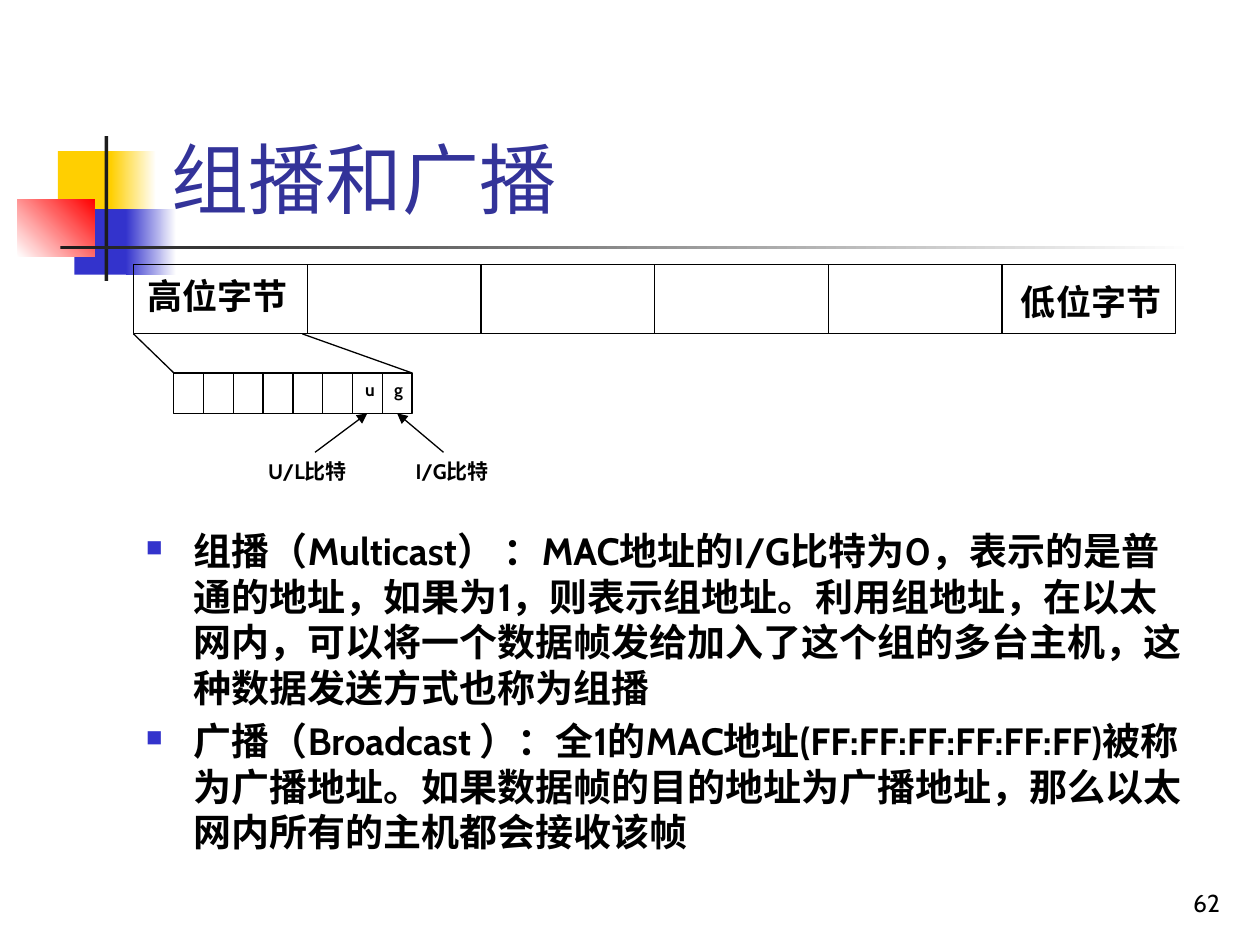
from dataclasses import dataclass

from lxml import etree
from pptx import Presentation
from pptx import util as u
from pptx.dml import color
from pptx.enum import shapes, text
from pptx.oxml import ns


@dataclass(frozen=True)
class Theme:
    font: str = "Cabin"
    black: str = "000000"
    white: str = "FFFFFF"
    title: str = "333399"
    yellow: str = "FFCF01"
    blue: str = "3333CC"
    red: str = "FF0000"
    rule: str = "1C1C1C"
    title_size: float = 44
    body_size: float = 21.7
    byte_size: float = 20
    number_size: float = 14
    label_size: float = 12
    bit_size: float = 10
    line_width: float = 0.75


THEME = Theme()


def rgb(value):
    return color.RGBColor.from_string(value)


def add_child(parent, tag, **attributes):
    return etree.SubElement(parent, ns.qn(tag), attributes)


def add_text(slide, box, *paragraphs, size, fill=THEME.black, bold=False,
             align=text.PP_ALIGN.LEFT, anchor=text.MSO_ANCHOR.TOP,
             gap=0, bullet=None, indent=0):
    shape = slide.shapes.add_textbox(*map(u.Inches, box))
    frame = shape.text_frame
    frame.word_wrap = True
    frame.vertical_anchor = anchor
    for index, content in enumerate(paragraphs):
        paragraph = frame.add_paragraph() if index else frame.paragraphs[0]
        paragraph.alignment = align
        if index:
            paragraph.space_before = u.Pt(gap)
        run = paragraph.add_run()
        run.text = content
        run.font.name = THEME.font
        run.font.size = u.Pt(size)
        run.font.bold = bold
        run.font.color.rgb = rgb(fill)
        if bullet:
            add_bullet(paragraph, bullet, indent)
    return shape


def add_bullet(paragraph, bullet, indent):
    properties = paragraph._p.get_or_add_pPr()
    properties.set("marL", str(u.Inches(indent)))
    properties.set("indent", str(-u.Inches(indent)))
    bullet_color = add_child(properties, "a:buClr")
    add_child(bullet_color, "a:srgbClr", val=THEME.blue)
    add_child(properties, "a:buSzPct", val="60000")
    add_child(properties, "a:buChar", char=bullet)


def add_rectangle(slide, box):
    shape = slide.shapes.add_shape(shapes.MSO_SHAPE.RECTANGLE, *map(u.Inches, box))
    shape.shadow.inherit = False
    return shape


def add_block(slide, box, start, end=None, angle=0):
    shape = add_rectangle(slide, box)
    shape.line.fill.background()
    if end is None:
        shape.fill.solid()
        shape.fill.fore_color.rgb = rgb(start)
        return
    shape.fill.gradient()
    shape.fill.gradient_angle = angle
    for stop, value in zip(shape.fill.gradient_stops, (start, end)):
        stop.color.rgb = rgb(value)


def add_line(slide, start, end, target=None):
    points = map(u.Inches, (*start, *end))
    line = slide.shapes.add_connector(shapes.MSO_CONNECTOR.STRAIGHT, *points)
    line.line.color.rgb = rgb(THEME.black)
    line.line.width = u.Pt(THEME.line_width)
    if target is not None:
        line.end_connect(target, 2)
        add_child(line.line._get_or_add_ln(), "a:tailEnd", type="triangle")
    add_child(line._element.spPr, "a:effectLst")


def add_cells(slide, box, count):
    left, top, width, height = box
    step = width / count
    cells = []
    for index in range(count):
        cell = add_rectangle(slide, (left + index * step, top, step, height))
        cell.fill.background()
        cell.line.color.rgb = rgb(THEME.black)
        cell.line.width = u.Pt(THEME.line_width)
        cells.append(cell)
    return cells


def add_decoration(slide, box):
    left, top, width, _ = box
    blocks = (
        ((0.32, 0.12, 0.48, 0.52), THEME.yellow),
        ((0.74, 0.12, 0.36, 0.52), THEME.yellow, THEME.white),
        ((0.45, 0.58, 0.46, 0.52), THEME.blue),
        ((0.86, 0.58, 0.4, 0.52), THEME.blue, THEME.white),
        ((0, 0.5, 0.61, 0.46), THEME.white, THEME.red, 45),
        ((0.69, 0, 0.03, 1.15), THEME.rule),
        ((0.34, 0.87, width - 0.34, 0.03), THEME.rule, THEME.white),
    )
    for (x, y, block_width, block_height), *colors in blocks:
        add_block(slide, (left + x, top + y, block_width, block_height), *colors)


def add_address_diagram(slide, box):
    left, top, width, _ = box
    byte_bottom = top + 0.55
    bit_left, bit_top, bit_width, bit_height = left + 0.32, top + 0.86, 1.89, 0.32
    label_top = top + 1.49
    bits = add_cells(slide, (bit_left, bit_top, bit_width, bit_height), 8)
    add_cells(slide, (left, top, width, 0.55), 6)

    byte_labels = (("高位字节", left, 0.03), ("低位字节", left + width - 1.34, 0.08))
    for label, x, offset in byte_labels:
        add_text(slide, (x, top + offset, 1.34, 0.44), label,
                 size=THEME.byte_size, bold=True, align=text.PP_ALIGN.CENTER)

    add_line(slide, (left, byte_bottom), (bit_left, bit_top))
    add_line(slide, (left + 1.34, byte_bottom), (bit_left + bit_width, bit_top))

    flags = (
        ("u", "U/L比特", bits[-2], 1.74, 1.44, 0.97),
        ("g", "I/G比特", bits[-1], 1.97, 2.46, 2.14),
    )
    for letter, label, bit, letter_x, arrow_x, label_x in flags:
        add_text(slide, (left + letter_x, bit_top, 0.24, 0.27), letter,
                 size=THEME.bit_size, bold=True)
        arrow_end = (u.Emu(bit.left + bit.width // 2).inches, bit_top + bit_height)
        add_line(slide, (left + arrow_x, label_top), arrow_end, target=bit)
        add_text(slide, (left + label_x, label_top, 0.86, 0.3), label,
                 size=THEME.label_size, bold=True)


def add_explanation(slide, box):
    add_text(
        slide, box,
        "组播（Multicast） ：MAC地址的I/G比特为0，表示的是普通的地址，如果为1，则表示组地址。"
        "利用组地址，在以太网内，可以将一个数据帧发给加入了这个组的多台主机，这种数据发送方式也称为组播",
        "广播（Broadcast ）：全1的MAC地址(FF:FF:FF:FF:FF:FF)被称为广播地址。"
        "如果数据帧的目的地址为广播地址，那么以太网内所有的主机都会接收该帧",
        size=THEME.body_size, bold=True, gap=THEME.body_size * 0.2,
        bullet="■", indent=0.38)


def main():
    presentation = Presentation()
    presentation.slide_width = u.Inches(10)
    presentation.slide_height = u.Inches(7.5)
    slide = presentation.slides.add_slide(presentation.slide_layouts[6])
    add_decoration(slide, (0.14, 1.08, 9.34, 1.15))
    add_text(slide, (7.7, 6.83, 2.08, 0.5), "62", size=THEME.number_size,
             align=text.PP_ALIGN.RIGHT, anchor=text.MSO_ANCHOR.BOTTOM)
    add_text(slide, (1.26, 0.23, 8.52, 1.6), "组播和广播", size=THEME.title_size,
             fill=THEME.title, anchor=text.MSO_ANCHOR.BOTTOM)
    add_explanation(slide, (1.06, 4.14, 8.5, 3))
    add_address_diagram(slide, (1.06, 2.1, 8.27, 1.79))
    presentation.save("out.pptx")


if __name__ == "__main__":
    main()
